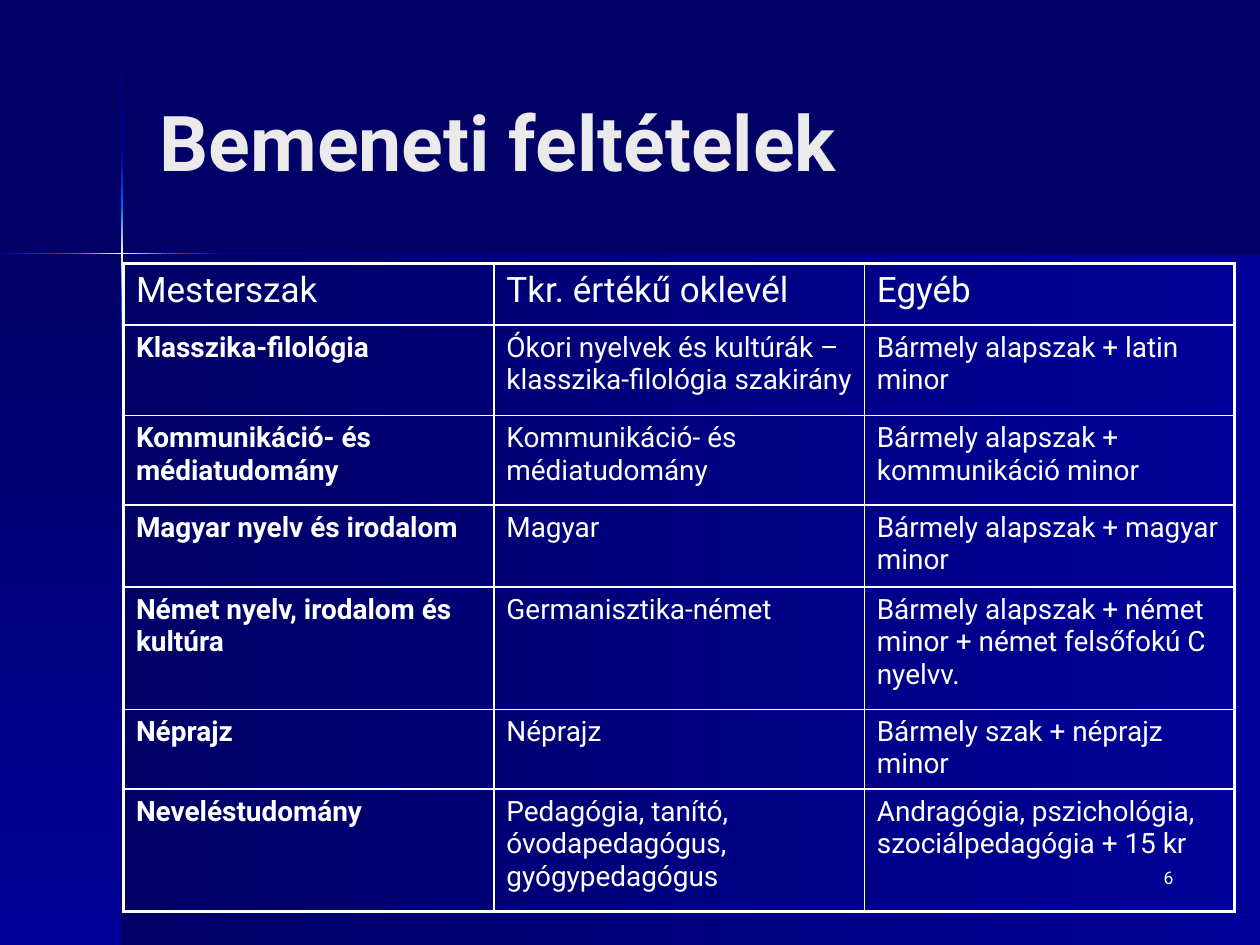
from copy import deepcopy
from dataclasses import dataclass

from lxml import etree
from pptx import Presentation
from pptx import util as u
from pptx.dml.color import RGBColor
from pptx.enum import shapes, text
from pptx.oxml.ns import qn

COLORS = {
    "night": "000066",
    "navy": "000099",
    "azure": "0066FF",
    "glow": "FFFFCC",
    "title": "EAEAEA",
    "white": "FFFFFF",
}
FONT = "Roboto"
THIN, THICK = 1, 2.25
COLUMN_WIDTH = 2.94
ROW_HEIGHTS = (0.49, 0.72, 0.71, 0.65, 0.97, 0.63, 0.97)


@dataclass(frozen=True)
class Band:
    left: float
    top: float
    width: float
    height: float
    stops: tuple[str, ...]
    downward: bool = False


@dataclass(frozen=True)
class Label:
    wording: str
    box: tuple[float, float, float, float]
    size: float
    color: str
    bold: bool
    align: text.PP_ALIGN
    anchor: text.MSO_ANCHOR


BANDS = (
    Band(0.97, 2.02, 9.03, 5.48, ("night", "navy")),
    Band(0, 2.02, 0.97, 5.48, ("night", "navy"), True),
    Band(0.96, 0.01, 0.02, 1.2, ("night", "navy"), True),
    Band(0.96, 2.82, 0.02, 4.68, ("navy", "night"), True),
    Band(1.77, 2.01, 8.23, 0.01, ("navy", "night")),
    Band(0.96, 2.38, 0.02, 0.44, ("azure", "navy"), True),
    Band(0.96, 1.21, 0.02, 0.44, ("navy", "azure"), True),
    Band(0.96, 1.65, 0.02, 0.73, ("azure", "glow", "azure"), True),
    Band(0, 2.01, 0.61, 0.01, ("navy", "azure")),
    Band(1.33, 2.01, 0.44, 0.01, ("azure", "navy")),
    Band(0.6, 2.01, 0.73, 0.01, ("azure", "glow", "azure")),
)

LABELS = (
    Label("6", (7.33, 6.83, 2.08, 0.5), 10, "white", False,
          text.PP_ALIGN.RIGHT, text.MSO_ANCHOR.TOP),
    Label("Bemeneti feltételek", (1.17, 0.33, 8.25, 1.57), 44, "title", True,
          text.PP_ALIGN.LEFT, text.MSO_ANCHOR.MIDDLE),
)

REQUIREMENTS = (
    ("Mesterszak", "Tkr. értékű oklevél", "Egyéb"),
    ("Klasszika-filológia",
     "Ókori nyelvek és kultúrák – klasszika-filológia szakirány",
     "Bármely alapszak + latin minor"),
    ("Kommunikáció- és médiatudomány", "Kommunikáció- és médiatudomány",
     "Bármely alapszak + kommunikáció minor"),
    ("Magyar nyelv és irodalom", "Magyar", "Bármely alapszak + magyar minor"),
    ("Német nyelv, irodalom és kultúra", "Germanisztika-német",
     "Bármely alapszak + német minor + német felsőfokú C nyelvv."),
    ("Néprajz", "Néprajz", "Bármely szak + néprajz minor"),
    ("Neveléstudomány", "Pedagógia, tanító, óvodapedagógus, gyógypedagógus",
     "Andragógia, pszichológia, szociálpedagógia + 15 kr"),
)


def rgb(name: str) -> RGBColor:
    return RGBColor.from_string(COLORS[name])


def write(paragraph, wording: str, size: float, color: str, bold: bool) -> None:
    run = paragraph.add_run()
    run.text = wording
    formats = {"name": FONT, "size": u.Pt(size), "bold": bold}
    for attribute, value in formats.items():
        setattr(run.font, attribute, value)
    run.font.color.rgb = rgb(color)


def draw_band(slide, band: Band) -> None:
    strip = slide.shapes.add_shape(
        shapes.MSO_SHAPE.RECTANGLE,
        *map(u.Inches, (band.left, band.top, band.width, band.height)))
    strip.shadow.inherit = False
    strip.line.fill.background()
    strip.fill.gradient()
    strip.fill.gradient_angle = 270 if band.downward else 0
    stop_list = strip._element.spPr.find(".//" + qn("a:gsLst"))
    for _ in band.stops[2:]:
        stop_list.insert(1, deepcopy(stop_list[0]))
    for index, (stop, color) in enumerate(zip(strip.fill.gradient_stops, band.stops)):
        stop.position = index / (len(band.stops) - 1)
        stop.color.rgb = rgb(color)


def draw_label(slide, label: Label) -> None:
    frame = slide.shapes.add_textbox(*map(u.Inches, label.box)).text_frame
    frame.word_wrap = True
    frame.vertical_anchor = label.anchor
    paragraph = frame.paragraphs[0]
    paragraph.alignment = label.align
    write(paragraph, label.wording, label.size, label.color, label.bold)


def draw_border(cell, side: str, points: float) -> None:
    properties = cell._tc.get_or_add_tcPr()
    line = etree.SubElement(properties, qn(f"a:ln{side}"), w=str(u.Pt(points)))
    solid = etree.SubElement(line, qn("a:solidFill"))
    etree.SubElement(solid, qn("a:srgbClr"), val=COLORS["white"])


def draw_requirements(slide) -> None:
    last_row, last_column = len(REQUIREMENTS) - 1, len(REQUIREMENTS[0]) - 1
    box = (0.98, 2.09, COLUMN_WIDTH * (last_column + 1), sum(ROW_HEIGHTS))
    table = slide.shapes.add_table(
        last_row + 1, last_column + 1, *map(u.Inches, box)).table
    table.first_row = table.horz_banding = False
    for column in table.columns:
        column.width = u.Inches(COLUMN_WIDTH)
    for row, height in zip(table.rows, ROW_HEIGHTS):
        row.height = u.Inches(height)
    for r, entries in enumerate(REQUIREMENTS):
        for c, wording in enumerate(entries):
            cell = table.cell(r, c)
            outer_edges = {"L": c == 0, "R": c == last_column,
                           "T": r == 0, "B": r == last_row}
            for side, outer in outer_edges.items():
                draw_border(cell, side, THICK if outer else THIN)
            cell.fill.background()
            cell.margin_right = u.Inches(0.08)
            size = 20 if r == 0 else 16
            paragraph = cell.text_frame.paragraphs[0]
            paragraph.space_before = u.Pt(size * 0.2)
            write(paragraph, wording, size, "white", r > 0 and c == 0)


def main() -> None:
    deck = Presentation()
    deck.slide_width, deck.slide_height = u.Inches(10), u.Inches(7.5)
    slide = deck.slides.add_slide(deck.slide_layouts[6])
    slide.background.fill.solid()
    slide.background.fill.fore_color.rgb = rgb("night")
    for band in BANDS:
        draw_band(slide, band)
    for label in LABELS:
        draw_label(slide, label)
    draw_requirements(slide)
    deck.save("out.pptx")


if __name__ == "__main__":
    main()
